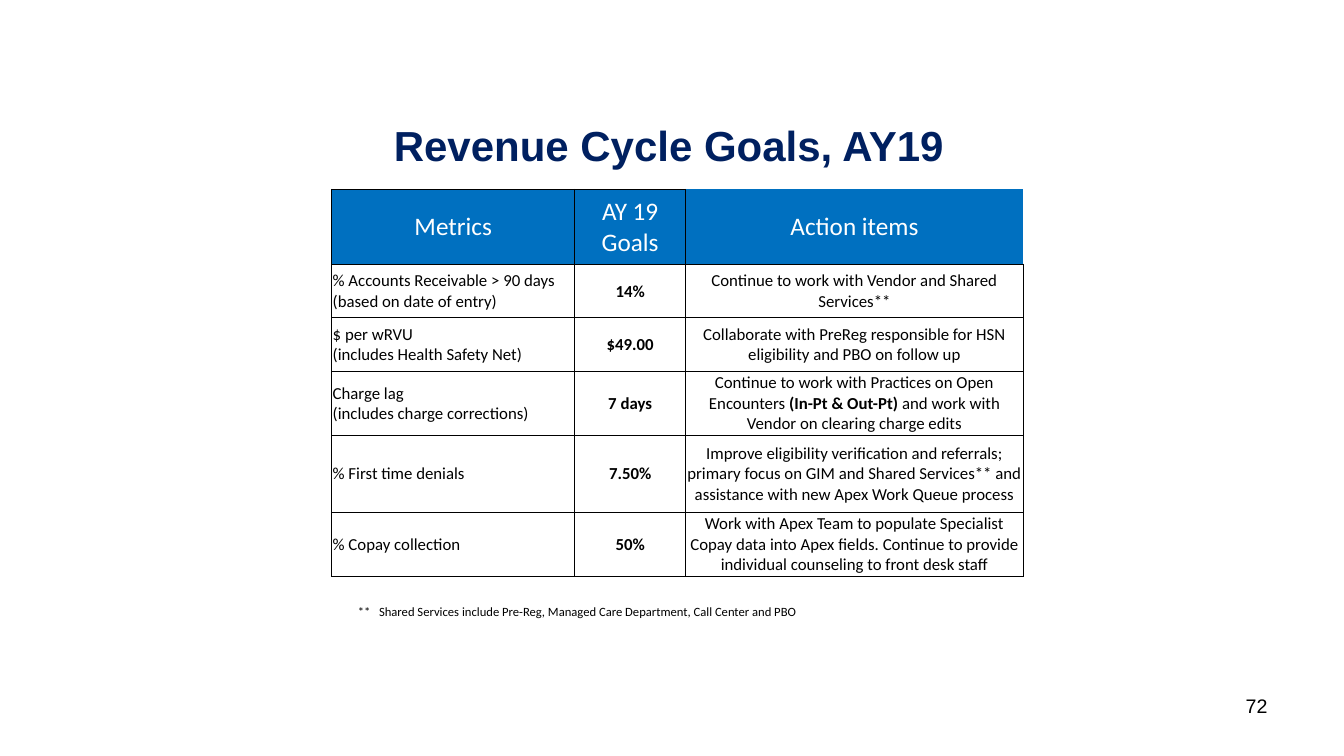
from lxml.etree import SubElement
from pptx import Presentation
from pptx.dml.color import RGBColor
from pptx.enum.text import MSO_ANCHOR, PP_ALIGN
from pptx.oxml.ns import qn
from pptx.util import Inches, Pt

NAVY = RGBColor(0x00, 0x20, 0x60)
BLUE = RGBColor(0x00, 0x70, 0xC0)
BLACK = RGBColor(0x00, 0x00, 0x00)
WHITE = RGBColor(0xFF, 0xFF, 0xFF)

COLUMN_WIDTHS = (2.41, 1.1, 3.35)
ROW_HEIGHTS = (0.74, 0.53, 0.53, 0.64, 0.76, 0.64)
HEADERS = ("Metrics", "AY 19 Goals", "Action items")
GOALS = (
    ("% Accounts Receivable > 90 days\v(based on date of entry)", "14%",
     ("Continue to work with Vendor and Shared Services**",)),
    ("$ per wRVU\v(includes Health Safety Net)", "$49.00",
     ("Collaborate with PreReg responsible for HSN eligibility and PBO on follow up",)),
    ("Charge lag\v(includes charge corrections)", "7 days",
     ("Continue to work with Practices on Open Encounters ", "(In-Pt & Out-Pt)",
      " and work with Vendor on clearing charge edits")),
    ("% First time denials", "7.50%",
     ("Improve eligibility verification and referrals; primary focus on GIM and "
      "Shared Services** and assistance with new Apex Work Queue process",)),
    ("% Copay collection", "50%",
     ("Work with Apex Team to populate Specialist Copay data into Apex fields. "
      "Continue to provide individual counseling to front desk staff",)),
)


def format_paragraph(paragraph, name, size, color, alignment, bold=False):
    """Set the font and alignment of a paragraph."""
    paragraph.alignment = alignment
    font = paragraph.font
    font.name, font.size, font.bold = name, Pt(size), bold
    font.color.rgb = color


def set_margins(frame, horizontal, top, bottom):
    """Set the inner margins of a text frame or cell in inches."""
    frame.margin_left = frame.margin_right = Inches(horizontal)
    frame.margin_top, frame.margin_bottom = Inches(top), Inches(bottom)


def add_title(slide, text):
    """Fill and place the title placeholder."""
    title = slide.shapes.title
    title.left, title.top = Inches(3.26), Inches(0.97)
    title.width, title.height = Inches(6.75), Inches(0.94)
    frame = title.text_frame
    frame.text = text
    frame.vertical_anchor = MSO_ANCHOR.MIDDLE
    set_margins(frame, 0.07, 0.04, 0.04)
    format_paragraph(frame.paragraphs[0], "Arial", 30, NAVY, PP_ALIGN.CENTER, True)


def add_text(slide, text, left, top, width, height):
    """Add a wrapping text box and return its text frame."""
    box = slide.shapes.add_textbox(Inches(left), Inches(top), Inches(width), Inches(height))
    frame = box.text_frame
    frame.word_wrap = True
    frame.text = text
    return frame


def set_borders(cell, widths):
    """Draw black cell borders; a width of zero hides that side."""
    properties = cell._tc.get_or_add_tcPr()
    for position, (side, width) in enumerate(zip("LRTB", widths)):
        line = SubElement(properties, qn(f"a:ln{side}"), w=str(Pt(width)))
        if width:
            fill = SubElement(line, qn("a:solidFill"))
            SubElement(fill, qn("a:srgbClr"), val=str(BLACK))
        else:
            SubElement(line, qn("a:noFill"))
        properties.insert(position, line)


def fill_cell(cell, runs, size, color, fill, alignment, bold=False):
    """Write runs into a cell, with every second run in bold."""
    cell.vertical_anchor = MSO_ANCHOR.MIDDLE
    set_margins(cell, 0.01, 0.01, 0)
    cell.fill.solid()
    cell.fill.fore_color.rgb = fill
    paragraph = cell.text_frame.paragraphs[0]
    if len(runs) == 1:
        cell.text = runs[0]
    else:
        for index, text in enumerate(runs):
            run = paragraph.add_run()
            run.text = text
            run.font.bold = index % 2 == 1
    for paragraph in cell.text_frame.paragraphs:
        format_paragraph(paragraph, "Calibri", size, color, alignment, bold)


def add_goals_table(slide):
    """Add the table of metrics, goals and action items."""
    table = slide.shapes.add_table(
        len(ROW_HEIGHTS), len(COLUMN_WIDTHS), Inches(3.29), Inches(1.88),
        Inches(sum(COLUMN_WIDTHS)), Inches(sum(ROW_HEIGHTS))).table
    table.horz_banding = False
    for column, width in zip(table.columns, COLUMN_WIDTHS):
        column.width = Inches(width)
    for row, height in zip(table.rows, ROW_HEIGHTS):
        row.height = Inches(height)
    last = len(HEADERS) - 1
    for column, header in enumerate(HEADERS):
        cell = table.cell(0, column)
        fill_cell(cell, (header,), 18, WHITE, BLUE, PP_ALIGN.CENTER)
        right, top = (0, 0) if column == last else (0.5, 1)
        set_borders(cell, (0.5 if column else 1, right, top, 0.5))
    for row, (metric, goal, actions) in enumerate(GOALS, start=1):
        for column, runs in enumerate(((metric,), (goal,), actions)):
            cell = table.cell(row, column)
            alignment = PP_ALIGN.CENTER if column else PP_ALIGN.LEFT
            fill_cell(cell, runs, 12, BLACK, WHITE, alignment, column == 1)
            set_borders(cell, (0.5 if column else 1, 0.5, 0.5, 0.5))


def add_footnote(slide, text):
    """Add the footnote with a hanging indent after its mark."""
    frame = add_text(slide, text, 3.48, 5.95, 5.9, 0.23)
    frame.vertical_anchor = MSO_ANCHOR.MIDDLE
    set_margins(frame, 0.07, 0.04, 0.04)
    paragraph = frame.paragraphs[0]
    format_paragraph(paragraph, "Calibri", 9, BLACK, PP_ALIGN.LEFT)
    properties = paragraph._p.get_or_add_pPr()
    properties.set("marL", str(Inches(0.21)))
    properties.set("indent", str(-Inches(0.21)))


def add_page_number(slide, number):
    """Add the page number at the lower right."""
    frame = add_text(slide, number, 9.56, 6.83, 3.11, 0.52)
    format_paragraph(frame.paragraphs[0], "Arial", 14, BLACK, PP_ALIGN.RIGHT)


def main():
    """Build the slide and save it."""
    presentation = Presentation()
    presentation.slide_width, presentation.slide_height = Inches(13.33), Inches(7.5)
    slide = presentation.slides.add_slide(presentation.slide_layouts.get_by_name("Title Only"))
    add_title(slide, "Revenue Cycle Goals, AY19")
    add_page_number(slide, "72")
    add_goals_table(slide)
    add_footnote(slide, "**\tShared Services include Pre-Reg, Managed Care Department, "
                        "Call Center and PBO")
    presentation.save("out.pptx")


if __name__ == "__main__":
    main()
